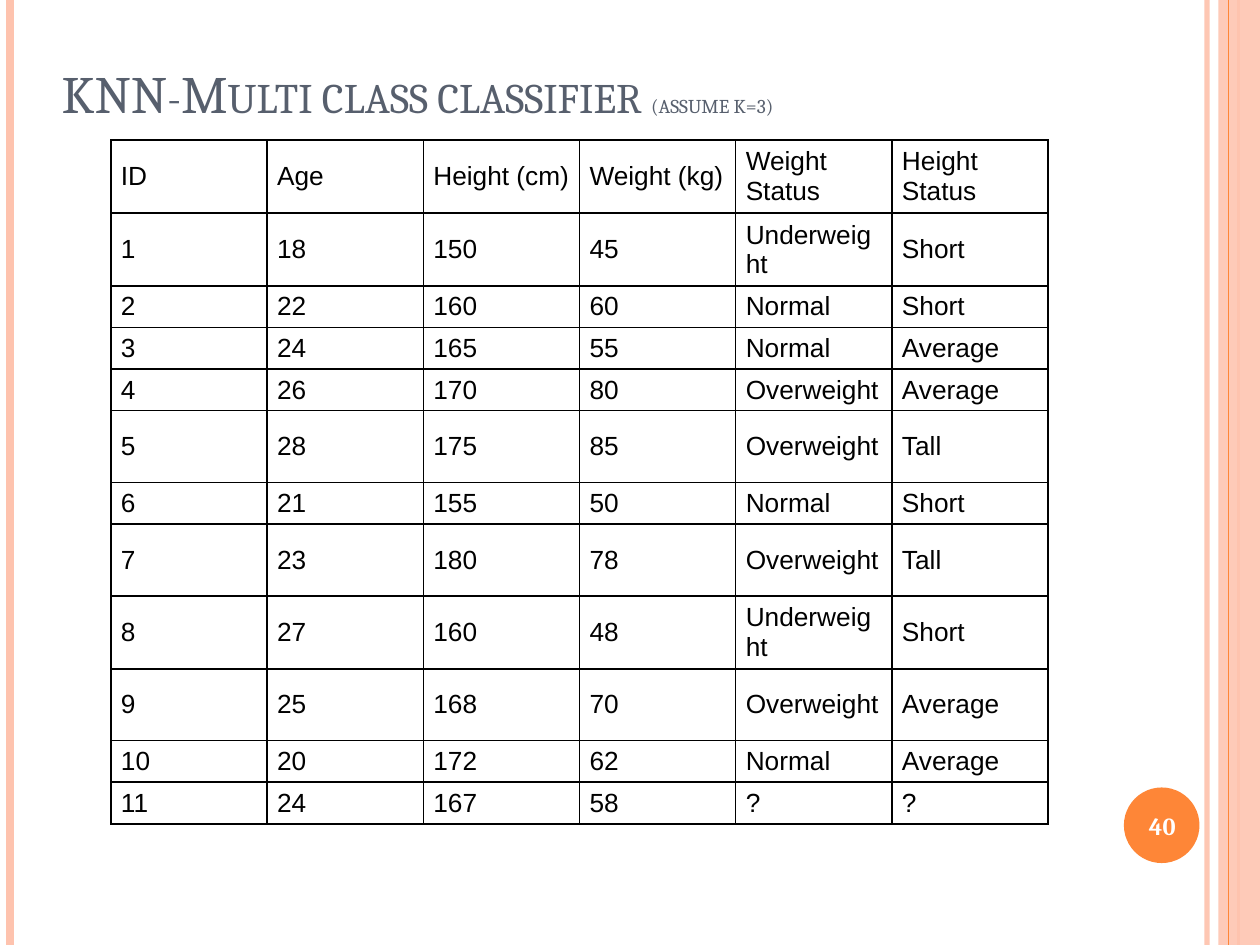
from lxml.etree import SubElement
from pptx import Presentation
from pptx.dml.color import RGBColor
from pptx.enum.shapes import MSO_CONNECTOR, MSO_SHAPE
from pptx.enum.text import MSO_ANCHOR, PP_ALIGN
from pptx.oxml.ns import qn
from pptx.util import Inches, Pt

BLACK = RGBColor(0x00, 0x00, 0x00)
WHITE = RGBColor(0xFF, 0xFF, 0xFF)
SLATE = RGBColor(0x57, 0x5F, 0x6D)
ORANGE = RGBColor(0xFE, 0x86, 0x37)
PEACH = RGBColor(0xFE, 0xC3, 0xAE)

ROWS = [
    ["ID", "Age", "Height (cm)", "Weight (kg)", "Weight Status", "Height Status"],
    ["1", "18", "150", "45", "Underweight", "Short"],
    ["2", "22", "160", "60", "Normal", "Short"],
    ["3", "24", "165", "55", "Normal", "Average"],
    ["4", "26", "170", "80", "Overweight", "Average"],
    ["5", "28", "175", "85", "Overweight", "Tall"],
    ["6", "21", "155", "50", "Normal", "Short"],
    ["7", "23", "180", "78", "Overweight", "Tall"],
    ["8", "27", "160", "48", "Underweight", "Short"],
    ["9", "25", "168", "70", "Overweight", "Average"],
    ["10", "20", "172", "62", "Normal", "Average"],
    ["11", "24", "167", "58", "?", "?"],
]
TALL, LOW, LOWEST = 0.57, 0.33, 0.25
ROW_HEIGHTS = [TALL, TALL, LOW, LOW, LOWEST, TALL, LOW, TALL, TALL, TALL, LOW, LOW]
COLUMN_WIDTH = 1.24


class SlideBuilder:
    heading_font = "Cambria"
    table_font = "Arial"
    cell_format = {
        "vertical_anchor": MSO_ANCHOR.MIDDLE,
        "margin_left": Inches(0.08),
        "margin_right": Inches(0.08),
        "margin_top": Inches(0.04),
        "margin_bottom": Inches(0.04),
    }

    def __init__(self, slide):
        self.slide = slide

    def apply(self, target, values):
        for name, value in values.items():
            setattr(target, name, value)

    def set_alpha(self, properties, percent):
        color = properties.find(".//" + qn("a:srgbClr"))
        SubElement(color, qn("a:alpha")).set("val", str(percent * 1000))

    def add_run(self, paragraph, text, font_name, size, color, bold=False, small_caps=False):
        run = paragraph.add_run()
        run.text = text
        self.apply(run.font, {"name": font_name, "size": Pt(size), "bold": bold})
        run.font.color.rgb = color
        if small_caps:
            run.font._element.set("cap", "small")

    def vertical_line(self, left, color, width, alpha=100):
        line = self.slide.shapes.add_connector(
            MSO_CONNECTOR.STRAIGHT, Inches(left), 0, Inches(left), Inches(7.5))
        line.line.color.rgb = color
        line.line.width = Pt(width)
        properties = line._element.spPr
        if alpha < 100:
            self.set_alpha(properties, alpha)
        SubElement(properties, qn("a:effectLst"))

    def filled_shape(self, kind, box, color, alpha=100):
        shape = self.slide.shapes.add_shape(kind, *map(Inches, box))
        shape.shadow.inherit = False
        shape.fill.solid()
        shape.fill.fore_color.rgb = color
        shape.line.fill.background()
        if alpha < 100:
            self.set_alpha(shape._element.spPr, alpha)

    def text(self, box, runs, color, anchor, alignment=PP_ALIGN.LEFT, **run_format):
        frame = self.slide.shapes.add_textbox(*map(Inches, box)).text_frame
        self.apply(frame, {"word_wrap": True, "vertical_anchor": anchor})
        paragraph = frame.paragraphs[0]
        paragraph.alignment = alignment
        for content, size in runs:
            self.add_run(paragraph, content, self.heading_font, size, color, **run_format)

    def add_borders(self, cell):
        properties = cell._tc.get_or_add_tcPr()
        for position, side in enumerate(("lnL", "lnR", "lnT", "lnB")):
            border = properties.makeelement(qn("a:" + side), {"w": str(Pt(1))})
            fill = SubElement(border, qn("a:solidFill"))
            SubElement(fill, qn("a:srgbClr")).set("val", str(BLACK))
            properties.insert(position, border)

    def table(self, left, top, rows, row_heights, column_width):
        columns = len(rows[0])
        table = self.slide.shapes.add_table(
            len(rows), columns, Inches(left), Inches(top),
            Inches(column_width * columns), Inches(sum(row_heights))).table
        self.apply(table, {"first_row": False, "horz_banding": False})
        for column in table.columns:
            column.width = Inches(column_width)
        for row, height, values in zip(table.rows, row_heights, rows):
            row.height = Inches(height)
            for cell, value in zip(row.cells, values):
                self.apply(cell, self.cell_format)
                cell.fill.background()
                self.add_borders(cell)
                self.add_run(cell.text_frame.paragraphs[0], value, self.table_font, 15, BLACK)


def main():
    presentation = Presentation()
    presentation.slide_width = Inches(10)
    presentation.slide_height = Inches(7.5)
    builder = SlideBuilder(presentation.slides.add_slide(presentation.slide_layouts[6]))

    builder.vertical_line(9.58, PEACH, 3, alpha=93)
    builder.vertical_line(0.08, PEACH, 4.5)
    builder.vertical_line(9.83, PEACH, 1.5)
    builder.filled_shape(MSO_SHAPE.RECTANGLE, (9.67, 0, 0.33, 7.5), PEACH, alpha=87)
    builder.vertical_line(9.75, ORANGE, 0.75)
    builder.filled_shape(MSO_SHAPE.OVAL, (8.92, 6.25, 0.6, 0.6), ORANGE)
    builder.text((0.39, -0.22, 8.17, 1.25),
                 [("KNN-Multi class classifier ", 30), ("(assume k=3)", 14)],
                 SLATE, MSO_ANCHOR.BOTTOM, small_caps=True)
    builder.table(0.88, 1.11, ROWS, ROW_HEIGHTS, COLUMN_WIDTH)
    builder.text((8.89, 6.27, 0.67, 0.57), [("40", 14)],
                 WHITE, MSO_ANCHOR.MIDDLE, PP_ALIGN.CENTER, bold=True)

    presentation.save("out.pptx")


if __name__ == "__main__":
    main()
